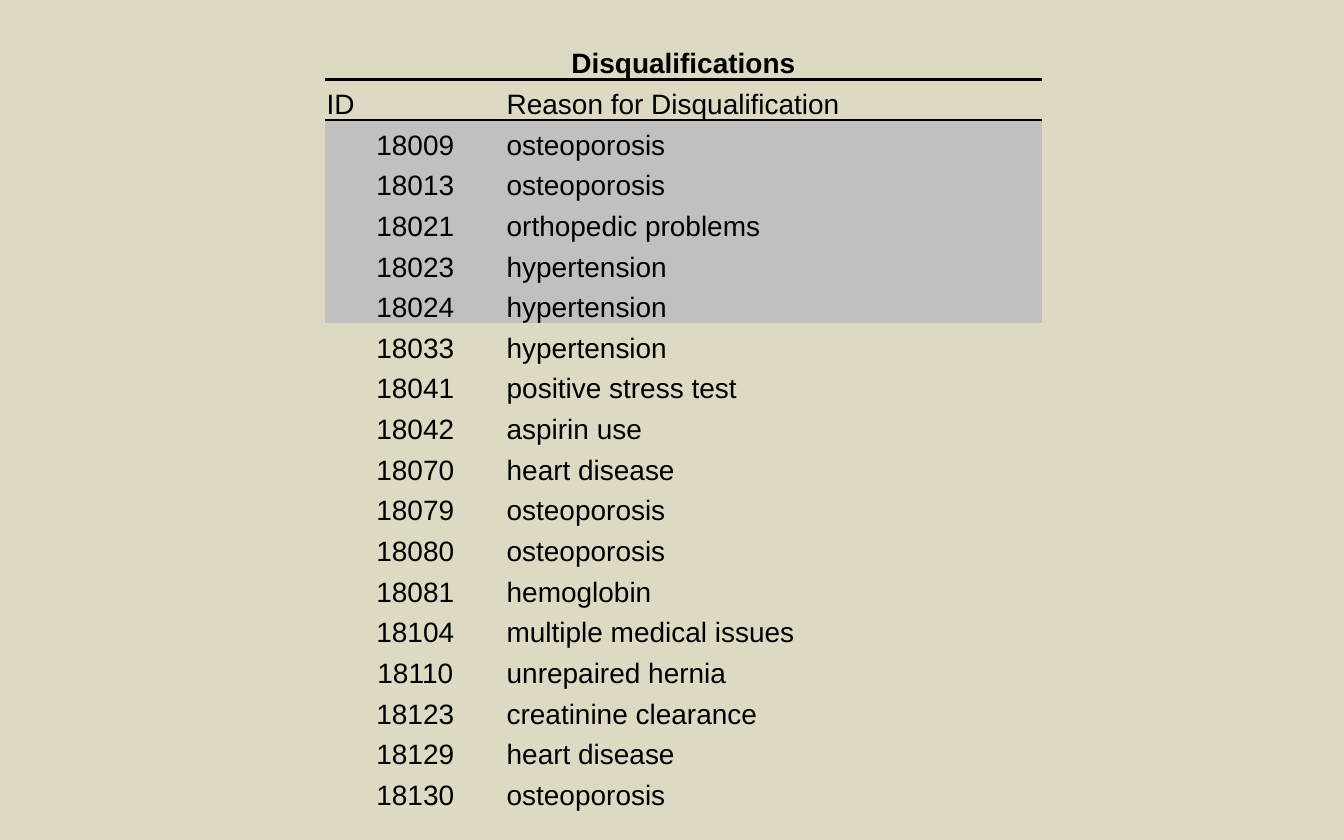
from lxml import etree
from pptx import Presentation
from pptx import util as u
from pptx.dml.color import RGBColor
from pptx.enum import text
from pptx.oxml import ns

SAND = RGBColor(0xDD, 0xD9, 0xC3)
GREY = RGBColor(0xC0, 0xC0, 0xC0)
BLACK = RGBColor(0, 0, 0)
PLAIN_STYLE = "{2D5ABB26-0587-4C30-8999-92F81FD0307C}"
RULE_WIDTH = u.Pt(1.5)
SHADED_ROWS = range(2, 7)

ROWS = [
    ("Disqualifications", ""),
    ("ID", "Reason for Disqualification"),
    ("18009", "osteoporosis"),
    ("18013", "osteoporosis"),
    ("18021", "orthopedic problems"),
    ("18023", "hypertension"),
    ("18024", "hypertension"),
    ("18033", "hypertension"),
    ("18041", "positive stress test"),
    ("18042", "aspirin use"),
    ("18070", "heart disease"),
    ("18079", "osteoporosis"),
    ("18080", "osteoporosis"),
    ("18081", "hemoglobin"),
    ("18104", "multiple medical issues"),
    ("18110", "unrepaired hernia"),
    ("18123", "creatinine clearance"),
    ("18129", "heart disease"),
    ("18130", "osteoporosis"),
]


def set_borders(cell, ruled_sides):
    """Draw a black rule on the given sides and clear the others."""
    properties = cell._tc.get_or_add_tcPr()
    for side in "LRTB":
        line = etree.SubElement(properties, ns.qn(f"a:ln{side}"))
        if side in ruled_sides:
            line.set("w", str(RULE_WIDTH))
            fill = etree.SubElement(line, ns.qn("a:solidFill"))
            etree.SubElement(fill, ns.qn("a:srgbClr"), val=str(BLACK))
        else:
            etree.SubElement(line, ns.qn("a:noFill"))


# Slide and background
deck = Presentation()
deck.slide_width, deck.slide_height = u.Inches(10), u.Inches(6.25)
page = deck.slides.add_slide(deck.slide_layouts[6])
page.background.fill.solid()
page.background.fill.fore_color.rgb = SAND

# Table grid: equal rows, a quarter of the width for the IDs
left, top = u.Inches(2.42), u.Inches(0.29)
width, height = u.Inches(5.33), u.Inches(5.75)
table = page.shapes.add_table(len(ROWS), 2, left, top, width, height).table
table.first_row = table.horz_banding = False
table._tbl.tblPr.find(ns.qn("a:tableStyleId")).text = PLAIN_STYLE
table.columns[0].width = u.Inches(1.34)
table.columns[1].width = width - table.columns[0].width
for row in table.rows:
    row.height = height // len(ROWS)
table.cell(0, 0).merge(table.cell(0, 1))

# Cells: title, headings, then one row for each person
ruled_sides = {0: "B", 1: "TB", 2: "T"}
for row_number, words in enumerate(ROWS):
    for column, wording in enumerate(words):
        cell = table.cell(row_number, column)
        cell.margin_left = cell.margin_right = cell.margin_top = u.Inches(0.01)
        cell.margin_bottom = 0
        cell.vertical_anchor = text.MSO_ANCHOR.BOTTOM
        set_borders(cell, ruled_sides.get(row_number, ""))
        if row_number in SHADED_ROWS:
            cell.fill.solid()
            cell.fill.fore_color.rgb = GREY
        else:
            cell.fill.background()
        if not wording:
            continue

        para = cell.text_frame.paragraphs[0]
        centred = column == 0 and row_number != 1
        para.alignment = text.PP_ALIGN.CENTER if centred else text.PP_ALIGN.LEFT
        span = para.add_run()
        span.text = wording
        span.font.name = "Arial"
        span.font.size = u.Pt(15)
        span.font.bold = row_number == 0
        span.font.color.rgb = BLACK

deck.save("out.pptx")
